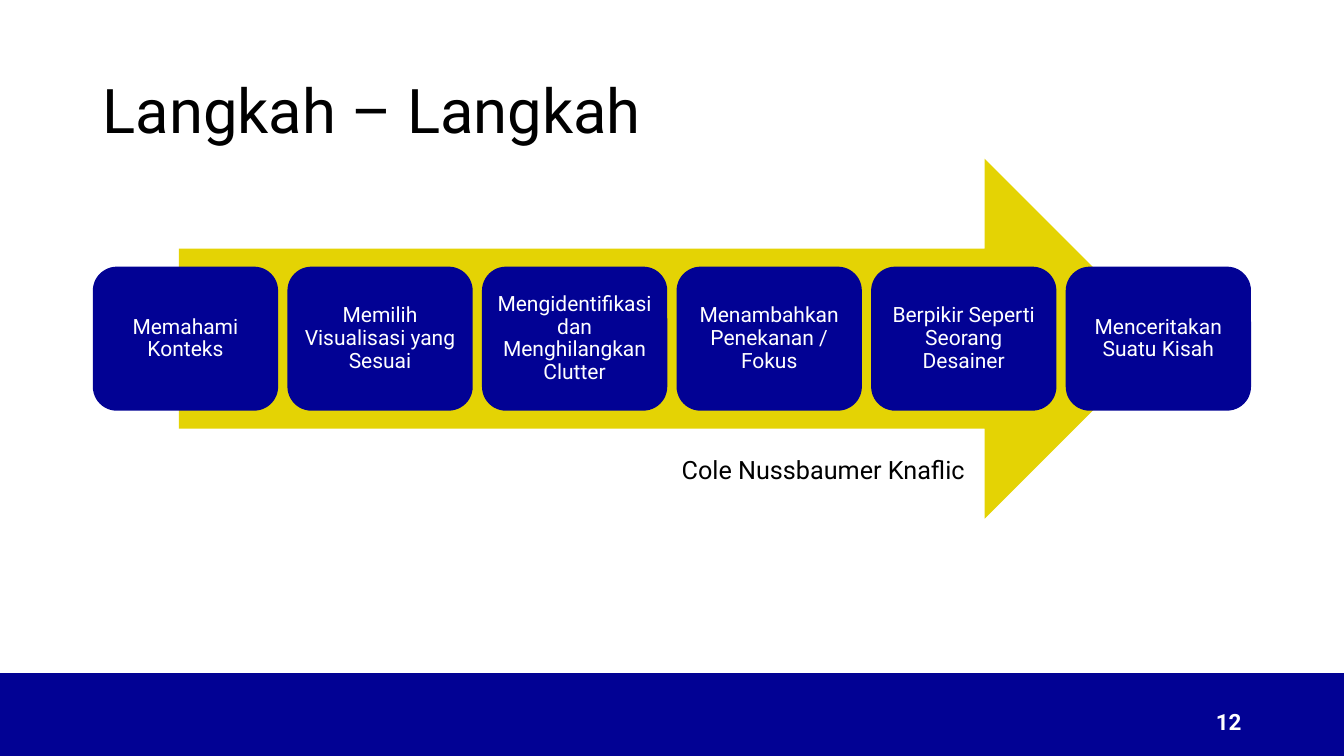
from dataclasses import dataclass

from pptx import Presentation
from pptx.dml.color import RGBColor
from pptx.enum.shapes import MSO_SHAPE as Preset
from pptx.enum.text import MSO_ANCHOR as Anchor, MSO_AUTO_SIZE as AutoSize, PP_ALIGN as Align
from pptx.shapes.autoshape import Shape
from pptx.slide import Slide
from pptx.util import Cm, Pt

COLORS = {"navy": "020294", "yellow": "E4D304", "black": "000000", "white": "FFFFFF"}
FONT = "Roboto"
SLIDE_WIDTH, SLIDE_HEIGHT = 33.87, 19.05
FOOTER_TOP = 16.96

STEPS = [
    "Memahami Konteks",
    "Memilih Visualisasi yang Sesuai",
    "Mengidentifikasi dan Menghilangkan Clutter",
    "Menambahkan Penekanan / Fokus",
    "Berpikir Seperti Seorang Desainer",
    "Menceritakan Suatu Kisah",
]
STEP_LEFT, STEP_TOP, STEP_WIDTH, STEP_HEIGHT = 2.34, 6.72, 4.67, 3.63
STEP_PITCH = STEP_WIDTH * 1.05
STEP_INSET = 0.15


@dataclass(frozen=True)
class Box:
    """A rectangle on the slide, in centimetres."""
    left: float
    top: float
    width: float
    height: float

    def lengths(self) -> tuple[Cm, Cm, Cm, Cm]:
        return Cm(self.left), Cm(self.top), Cm(self.width), Cm(self.height)


@dataclass(frozen=True)
class TextStyle:
    size: float
    color: str
    align: Align = Align.LEFT
    anchor: Anchor = Anchor.MIDDLE
    bold: bool = False
    line_spacing: float = 1.0


TITLE_STYLE = TextStyle(44, "black", line_spacing=0.9)
STEP_STYLE = TextStyle(15, "white", Align.CENTER, line_spacing=0.9)
AUTHOR_STYLE = TextStyle(18, "black", anchor=Anchor.TOP)
NUMBER_STYLE = TextStyle(16, "white", Align.RIGHT, bold=True)


def write(holder: Shape, text: str, style: TextStyle) -> None:
    frame = holder.text_frame
    frame.text = text
    frame.word_wrap = True
    frame.auto_size = AutoSize.NONE
    frame.vertical_anchor = style.anchor
    paragraph = frame.paragraphs[0]
    paragraph.alignment = style.align
    paragraph.line_spacing = style.line_spacing
    for run in paragraph.runs:
        run.font.name = FONT
        run.font.size = Pt(style.size)
        run.font.bold = style.bold
        run.font.color.rgb = RGBColor.from_string(COLORS[style.color])


def add_filled(slide: Slide, preset: Preset, box: Box, color: str) -> Shape:
    shape = slide.shapes.add_shape(preset, *box.lengths())
    shape.shadow.inherit = False
    shape.fill.solid()
    shape.fill.fore_color.rgb = RGBColor.from_string(COLORS[color])
    shape.line.fill.background()
    return shape


def add_label(slide: Slide, text: str, box: Box, style: TextStyle) -> None:
    write(slide.shapes.add_textbox(*box.lengths()), text, style)


def add_step(slide: Slide, index: int, text: str) -> None:
    box = Box(STEP_LEFT + index * STEP_PITCH, STEP_TOP, STEP_WIDTH, STEP_HEIGHT)
    step = add_filled(slide, Preset.ROUNDED_RECTANGLE, box, "navy")
    frame = step.text_frame
    frame.margin_left = frame.margin_right = Cm(STEP_INSET)
    frame.margin_top = frame.margin_bottom = Cm(STEP_INSET)
    write(step, text, STEP_STYLE)


def set_title(slide: Slide, text: str, box: Box) -> None:
    title = slide.shapes.title
    title.left, title.top, title.width, title.height = box.lengths()
    write(title, text, TITLE_STYLE)


def main() -> None:
    presentation = Presentation()
    presentation.slide_width = Cm(SLIDE_WIDTH)
    presentation.slide_height = Cm(SLIDE_HEIGHT)
    slide = presentation.slides.add_slide(presentation.slide_layouts[5])

    footer = Box(0, FOOTER_TOP, SLIDE_WIDTH, SLIDE_HEIGHT - FOOTER_TOP)
    add_filled(slide, Preset.RECTANGLE, footer, "navy")
    set_title(slide, "Langkah – Langkah", Box(2.33, 1.01, 29.21, 3.68))
    add_label(slide, "12", Box(23.92, 17.66, 7.62, 1.02), NUMBER_STYLE)

    add_filled(slide, Preset.RIGHT_ARROW, Box(4.51, 4, 24.84, 9.07), "yellow")
    for index, text in enumerate(STEPS):
        add_step(slide, index, text)
    add_label(slide, "Cole Nussbaumer Knaflic", Box(16.93, 11.33, 7.85, 1.02), AUTHOR_STYLE)

    presentation.save("out.pptx")


if __name__ == "__main__":
    main()
